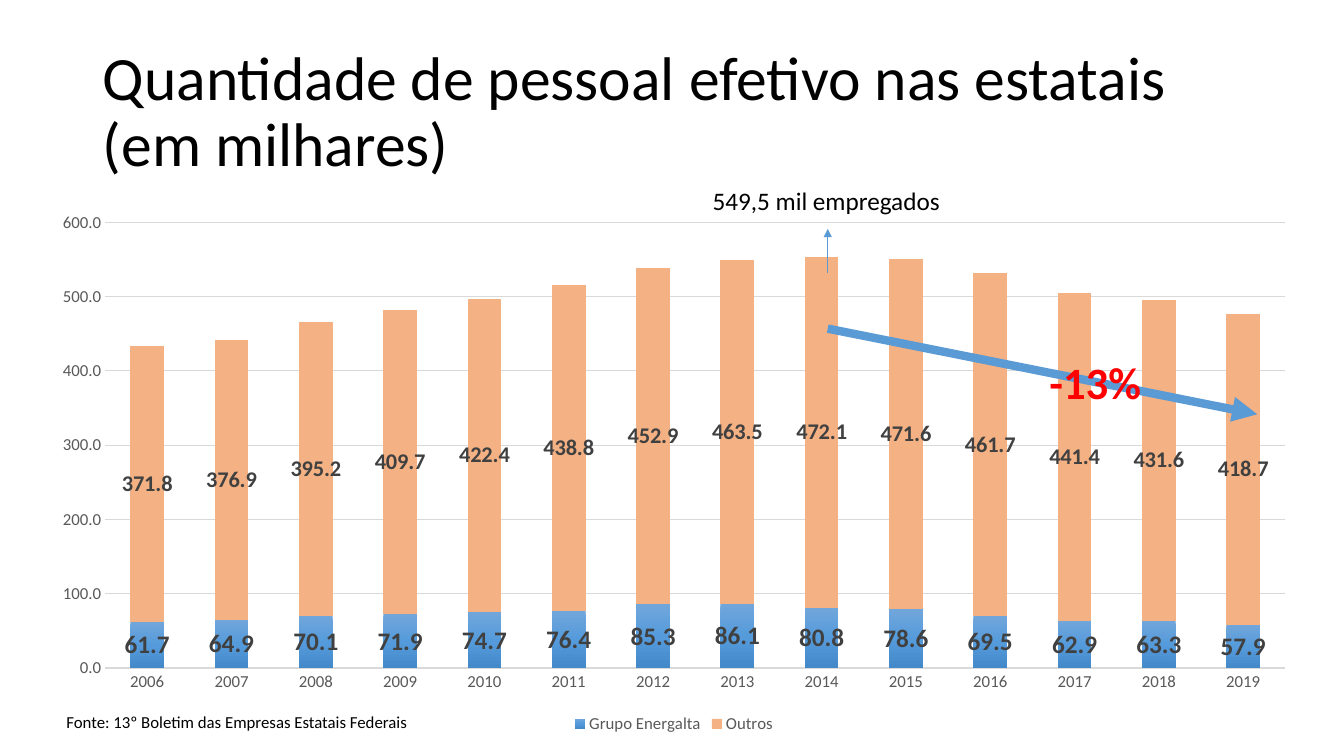
"""Build the slide on permanent staff in state-owned companies."""
from copy import deepcopy
from dataclasses import dataclass

from lxml import etree
from pptx import Presentation
from pptx import util as u
from pptx.chart.data import CategoryChartData
from pptx.dml.color import RGBColor
from pptx.enum import chart as charts, shapes, text
from pptx.oxml.ns import qn

FONT = "Calibri"
BLACK, GRAY, DARK, GRID = "000000", "595959", "404040", "D9D9D9"
BLUE, ORANGE, RED = "5B9BD5", "F4B183", "FF0000"
BLUE_GRADIENT = ((0, "71A6DB"), (0.5, "559BDB"), (1, "448ACA"))
WIDTH, HEIGHT = u.Inches(13.33), u.Inches(7.5)
COLUMNS = ROWS = 100


@dataclass
class Box:
    """A rectangle in grid columns and rows."""
    left: float
    top: float
    width: float
    height: float

    def place(self) -> tuple:
        """Return left, top, width and height as lengths."""
        return (column(self.left), row(self.top),
                column(self.width), row(self.height))


@dataclass
class Label:
    """A text box with one run."""
    words: str
    box: Box
    size: int
    color: str = BLACK
    bold: bool = False
    wrap: bool = False


@dataclass
class Arrow:
    """A straight arrow between two grid points."""
    start: tuple
    end: tuple
    weight: float


@dataclass
class Staff:
    """One series of the chart, in thousands of employees."""
    name: str
    values: tuple
    label_size: int


TITLE = Label("Quantidade de pessoal efetivo nas estatais (em milhares)",
              Box(6.9, 5.33, 86.25, 19.33), 44)
CHART_BOX = Box(2.78, 26.67, 94.75, 70.93)
LABELS = (
    Label("-13%", Box(77.34, 46.27, 9.15, 8.53), 32, RED, True, True),
    Label("Fonte: 13º Boletim das Empresas Estatais Federais",
          Box(4.2, 93.47, 27.23, 4), 12),
    Label("549,5 mil empregados", Box(52.29, 23.87, 18.6, 5.33), 18),
)
DECLINE = Arrow((61.59, 43.47), (93.55, 54.8), 6)
PEAK = Arrow((61.59, 36.13), (61.59, 30.27), 0.5)
STAFF = (
    Staff("Grupo Energalta",
          (61.7, 64.9, 70.1, 71.9, 74.7, 76.4, 85.3,
           86.1, 80.8, 78.6, 69.5, 62.9, 63.3, 57.9), 18),
    Staff("Outros",
          (371.8, 376.9, 395.2, 409.7, 422.4, 438.8, 452.9,
           463.5, 472.1, 471.6, 461.7, 441.4, 431.6, 418.7), 16),
)


def column(count: float) -> int:
    """Return the length of a number of columns."""
    return round(WIDTH * count / COLUMNS)


def row(count: float) -> int:
    """Return the length of a number of rows."""
    return round(HEIGHT * count / ROWS)


def paint(color_format, color: str) -> None:
    """Set a colour from a hex string."""
    color_format.rgb = RGBColor.from_string(color)


def style_font(font, size: int, color: str, bold: bool = False) -> None:
    """Set the face, size, colour and weight of a font."""
    font.name, font.size, font.bold = FONT, u.Pt(size), bold
    font.fill.solid()
    paint(font.fill.fore_color, color)


def write(shape, label: Label) -> None:
    """Write a label's run into a shape."""
    shape.text_frame.word_wrap = label.wrap
    run = shape.text_frame.paragraphs[0].add_run()
    run.text = label.words
    style_font(run.font, label.size, label.color, label.bold)


def add_title(slide) -> None:
    """Place and format the title placeholder."""
    title = slide.shapes.title
    title.left, title.top, title.width, title.height = TITLE.box.place()
    write(title, TITLE)
    frame = title.text_frame
    frame.word_wrap = True
    frame.auto_size = text.MSO_AUTO_SIZE.NONE
    frame.vertical_anchor = text.MSO_ANCHOR.MIDDLE
    frame.paragraphs[0].alignment = text.PP_ALIGN.LEFT
    frame.paragraphs[0].line_spacing = 0.9


def add_label(slide, label: Label) -> None:
    """Add a text box."""
    shape = slide.shapes.add_textbox(*label.box.place())
    write(shape, label)
    shape.text_frame.auto_size = text.MSO_AUTO_SIZE.SHAPE_TO_FIT_TEXT


def add_arrow(slide, arrow: Arrow) -> None:
    """Add a straight connector with a triangular head."""
    (start_x, start_y), (end_x, end_y) = arrow.start, arrow.end
    connector = slide.shapes.add_connector(
        shapes.MSO_CONNECTOR.STRAIGHT, column(start_x), row(start_y),
        column(end_x), row(end_y))
    connector.line.width = u.Pt(arrow.weight)
    paint(connector.line.color, BLUE)
    properties = connector._element.spPr
    etree.SubElement(properties.find(qn("a:ln")), qn("a:tailEnd"), type="triangle")
    etree.SubElement(properties, qn("a:effectLst"))


def fill_gradient(series) -> None:
    """Give a series the vertical blue gradient."""
    fill = series.format.fill
    fill.gradient()
    fill.gradient_angle = 270
    stop_list = series._element.xpath(".//a:gsLst")[0]
    stop_list.append(deepcopy(stop_list[0]))
    for stop, (position, color) in zip(fill.gradient_stops, BLUE_GRADIENT):
        stop.position = position
        paint(stop.color, color)


def format_axes(chart) -> None:
    """Format both axes and the gridlines."""
    for axis in (chart.category_axis, chart.value_axis):
        axis.major_tick_mark = axis.minor_tick_mark = charts.XL_TICK_MARK.NONE
        style_font(axis.tick_labels.font, 12, GRAY)
    years, values = chart.category_axis, chart.value_axis
    paint(years.format.line.color, GRID)
    years.format.line.width = u.Pt(1)
    values.format.line.fill.background()
    values.minimum_scale, values.maximum_scale, values.major_unit = 0, 600, 100
    values.tick_labels.number_format = "0.0"
    values.tick_labels.number_format_is_linked = False
    gridline = values.major_gridlines.format.line
    paint(gridline.color, GRID)
    gridline.width = u.Pt(0.75)


def add_staff_chart(slide) -> None:
    """Add the stacked columns of staff by year."""
    data = CategoryChartData(number_format="0.0")
    data.categories = [str(year) for year in range(2006, 2020)]
    for staff in STAFF:
        data.add_series(staff.name, staff.values)
    chart = slide.shapes.add_chart(
        charts.XL_CHART_TYPE.COLUMN_STACKED, *CHART_BOX.place(), data).chart
    style_font(chart.font, 10, BLACK)
    chart.has_title = False
    chart.has_legend = True
    chart.legend.position = charts.XL_LEGEND_POSITION.BOTTOM
    chart.legend.include_in_layout = False
    style_font(chart.legend.font, 12, GRAY)
    format_axes(chart)
    plot = chart.plots[0]
    plot.gap_width, plot.overlap, plot.vary_by_categories = 150, 100, False
    for series, staff in zip(plot.series, STAFF):
        labels = series.data_labels
        labels.show_value = True
        labels.position = charts.XL_LABEL_POSITION.CENTER
        style_font(labels.font, staff.label_size, DARK, True)
    group, others = plot.series
    fill_gradient(group)
    others.format.fill.solid()
    paint(others.format.fill.fore_color, ORANGE)


def main() -> None:
    """Build and save the presentation."""
    presentation = Presentation()
    presentation.slide_width, presentation.slide_height = WIDTH, HEIGHT
    slide = presentation.slides.add_slide(presentation.slide_layouts[5])
    add_title(slide)
    add_staff_chart(slide)
    add_arrow(slide, DECLINE)
    for label in LABELS:
        add_label(slide, label)
    add_arrow(slide, PEAK)
    presentation.save("out.pptx")


if __name__ == "__main__":
    main()
